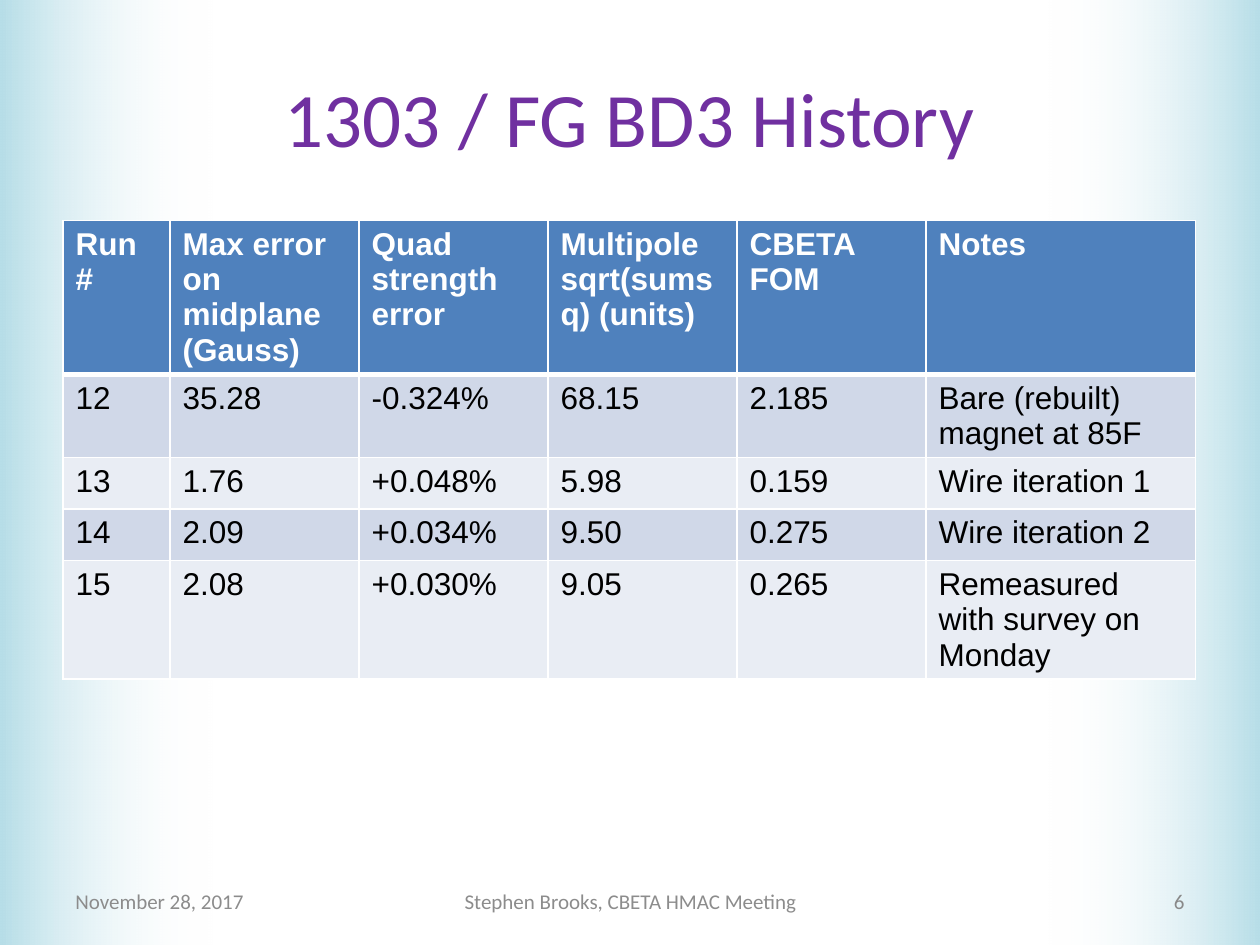
from lxml.etree import SubElement
from pptx import Presentation
from pptx.dml.color import RGBColor
from pptx.enum.shapes import MSO_SHAPE
from pptx.enum.text import MSO_ANCHOR, PP_ALIGN
from pptx.oxml.ns import qn
from pptx.util import Inches, Pt

TITLE = "1303 / FG BD3 History"
HEADERS = ["Run #", "Max error on midplane (Gauss)", "Quad strength error",
           "Multipole sqrt(sumsq) (units)", "CBETA FOM", "Notes"]
RUNS = [
    ["12", "35.28", "-0.324%", "68.15", "2.185", "Bare (rebuilt) magnet at 85F"],
    ["13", "1.76", "+0.048%", "5.98", "0.159", "Wire iteration 1"],
    ["14", "2.09", "+0.034%", "9.50", "0.275", "Wire iteration 2"],
    ["15", "2.08", "+0.030%", "9.05", "0.265", "Remeasured with survey on Monday"],
]
COLUMN_WIDTHS = [0.85, 1.5, 1.5, 1.5, 1.5, 2.14]
ROW_HEIGHT = 0.41
FOOTERS = [
    ("November 28, 2017", 0.5, 2.33, PP_ALIGN.LEFT, "footer"),
    ("Stephen Brooks, CBETA HMAC Meeting", 3.42, 3.17, PP_ALIGN.CENTER, "footer"),
    ("6", 7.17, 2.33, PP_ALIGN.RIGHT, "number"),
]
SLIDE_WIDTH, SLIDE_HEIGHT, BAND_WIDTH = 10, 7.5, 1.69

THEME = {
    "title": {"name": "Calibri", "size": Pt(44), "color": "7030A0"},
    "header": {"name": "Arial", "size": Pt(18), "bold": True, "color": "FFFFFF"},
    "body": {"name": "Arial", "size": Pt(18), "bold": False, "color": "000000"},
    "footer": {"name": "Calibri", "size": Pt(12), "color": "8C8C8C"},
    "number": {"name": "Calibri", "size": Pt(12), "color": "898989"},
    "header_fill": "4F81BD",
    "row_fills": ["D0D8E8", "E9EDF4"],
    "border": "FFFFFF",
    "band": ["B7DEE8", "FFFFFF"],
}


def write(text_frame, text, style, alignment=PP_ALIGN.LEFT):
    paragraph = text_frame.paragraphs[0]
    paragraph.alignment = alignment
    run = paragraph.add_run()
    run.text = text
    for attribute, value in THEME[style].items():
        if attribute == "color":
            run.font.color.rgb = RGBColor.from_string(value)
        else:
            setattr(run.font, attribute, value)


def add_band(slide, left, rotation):
    shape = slide.shapes.add_shape(MSO_SHAPE.RECTANGLE, Inches(left), 0,
                                   Inches(BAND_WIDTH), Inches(SLIDE_HEIGHT))
    shape.rotation = rotation
    shape.shadow.inherit = False
    shape.line.fill.background()
    shape.fill.gradient()
    shape.fill.gradient_angle = 0
    for stop, color in zip(shape.fill.gradient_stops, THEME["band"]):
        stop.color.rgb = RGBColor.from_string(color)
    outer_color = shape.element.findall(".//" + qn("a:srgbClr"))[-1]
    SubElement(outer_color, qn("a:alpha"), val="0")
    slide.shapes.element.insert(2, shape.element)


def set_borders(cell, top, bottom):
    properties = cell._tc.get_or_add_tcPr()
    widths = {"a:lnL": 1, "a:lnR": 1, "a:lnT": top, "a:lnB": bottom}
    for index, (tag, width) in enumerate(widths.items()):
        line = SubElement(properties, qn(tag), w=str(Pt(width)))
        fill = SubElement(line, qn("a:solidFill"))
        SubElement(fill, qn("a:srgbClr"), val=THEME["border"])
        properties.insert(index, line)


def add_history_table(slide):
    rows = [HEADERS] + RUNS
    table = slide.shapes.add_table(
        len(rows), len(HEADERS), Inches(0.5), Inches(1.75),
        Inches(sum(COLUMN_WIDTHS)), Inches(ROW_HEIGHT * len(rows))).table
    for column, width in zip(table.columns, COLUMN_WIDTHS):
        column.width = Inches(width)
    for row_index, texts in enumerate(rows):
        table.rows[row_index].height = Inches(ROW_HEIGHT)
        is_header = row_index == 0
        color = THEME["header_fill"] if is_header else THEME["row_fills"][(row_index - 1) % 2]
        for column_index, text in enumerate(texts):
            cell = table.cell(row_index, column_index)
            cell.fill.solid()
            cell.fill.fore_color.rgb = RGBColor.from_string(color)
            write(cell.text_frame, text, "header" if is_header else "body")
            set_borders(cell, 3 if row_index == 1 else 1, 3 if is_header else 1)


def add_footer(slide, text, left, width, alignment, style):
    box = slide.shapes.add_textbox(Inches(left), Inches(6.95), Inches(width), Inches(0.4))
    box.text_frame.word_wrap = True
    box.text_frame.vertical_anchor = MSO_ANCHOR.MIDDLE
    write(box.text_frame, text, style, alignment)


def main():
    presentation = Presentation()
    presentation.slide_width = Inches(SLIDE_WIDTH)
    presentation.slide_height = Inches(SLIDE_HEIGHT)
    slide = presentation.slides.add_slide(presentation.slide_layouts[5])

    title = slide.shapes.title
    bounds = {"left": 0.5, "top": 0.3, "width": 9, "height": 1.25}
    for attribute, value in bounds.items():
        setattr(title, attribute, Inches(value))
    title.text_frame.vertical_anchor = MSO_ANCHOR.MIDDLE
    write(title.text_frame, TITLE, "title", PP_ALIGN.CENTER)

    for left, rotation in [(0, 0), (SLIDE_WIDTH - BAND_WIDTH, 180)]:
        add_band(slide, left, rotation)
    add_history_table(slide)
    for footer in FOOTERS:
        add_footer(slide, *footer)
    presentation.save("out.pptx")


if __name__ == "__main__":
    main()
